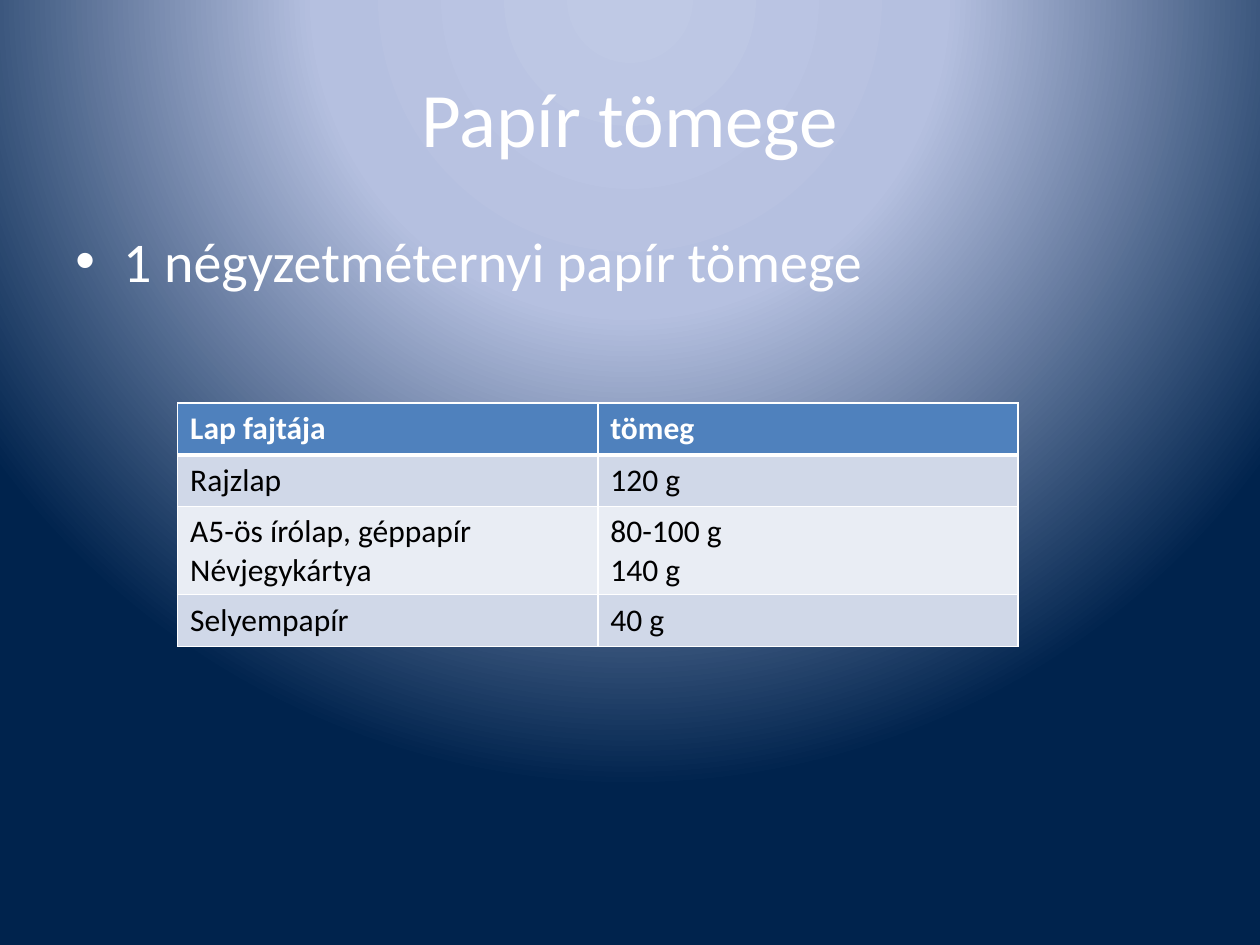
from lxml import etree
from pptx import Presentation
from pptx.dml.color import RGBColor
from pptx.enum.text import MSO_ANCHOR, PP_ALIGN
from pptx.oxml import parse_xml
from pptx.oxml.ns import nsdecls, qn
from pptx.util import Inches, Pt

CENTER = PP_ALIGN.CENTER
MIDDLE = MSO_ANCHOR.MIDDLE

WHITE = RGBColor(0xFF, 0xFF, 0xFF)
BLACK = RGBColor(0x00, 0x00, 0x00)
HEADER_BLUE = RGBColor(0x4F, 0x81, 0xBD)
BAND_DARK = RGBColor(0xD0, 0xD8, 0xE8)
BAND_LIGHT = RGBColor(0xE9, 0xED, 0xF4)
GLOW_CENTER = RGBColor(0xBF, 0xC9, 0xE5)
GLOW_EDGE = RGBColor(0xB5, 0xC0, 0xE0)
NIGHT_BLUE = RGBColor(0x00, 0x23, 0x4D)

PAPER_WEIGHTS = [
    (["Lap fajtája"], ["tömeg"]),
    (["Rajzlap"], ["120 g"]),
    (["A5-ös írólap, géppapír", "Névjegykártya"], ["80-100 g", "140 g"]),
    (["Selyempapír"], ["40 g"]),
]


class PaperSlide:
    font = "Calibri"

    def __init__(self, presentation):
        self.slide = presentation.slides.add_slide(presentation.slide_layouts[5])

    def background(self, stops):
        self.slide.background.fill.gradient()
        gradient = self.slide.element.find(".//" + qn("a:gradFill"))
        stop_xml = "".join(
            f'<a:gs pos="{position * 1000}"><a:srgbClr val="{color}"/></a:gs>'
            for position, color in stops
        )
        glow = parse_xml(
            f'<a:gradFill {nsdecls("a")} rotWithShape="1"><a:gsLst>{stop_xml}</a:gsLst>'
            '<a:path path="circle"><a:fillToRect l="50000" t="-80000" r="50000" b="180000"/>'
            "</a:path></a:gradFill>"
        )
        gradient.getparent().replace(gradient, glow)

    def add_text(self, paragraph, text, size, color, bold=False):
        run = paragraph.add_run()
        run.text = text
        run.font.name = self.font
        run.font.size = Pt(size)
        run.font.bold = bold
        run.font.color.rgb = color

    def title(self, text, left, top, width, height):
        heading = self.slide.shapes.title
        heading.left, heading.top = Inches(left), Inches(top)
        heading.width, heading.height = Inches(width), Inches(height)
        heading.text_frame.vertical_anchor = MIDDLE
        paragraph = heading.text_frame.paragraphs[0]
        paragraph.alignment = CENTER
        self.add_text(paragraph, text, 44, WHITE)

    def bullet(self, text, left, top, width, height):
        body = self.slide.shapes.add_textbox(
            Inches(left), Inches(top), Inches(width), Inches(height)
        )
        body.text_frame.word_wrap = True
        paragraph = body.text_frame.paragraphs[0]
        paragraph.space_before = Pt(6.4)
        self.add_text(paragraph, text, 32, WHITE)
        properties = paragraph._p.get_or_add_pPr()
        properties.set("marL", str(Inches(0.38)))
        properties.set("indent", str(Inches(-0.38)))
        etree.SubElement(properties, qn("a:buFont"), typeface="Arial")
        etree.SubElement(properties, qn("a:buChar"), char="•")

    def borders(self, cell, top, bottom):
        properties = cell._tc.get_or_add_tcPr()
        for side, weight in (("L", 1), ("R", 1), ("T", top), ("B", bottom)):
            line = etree.SubElement(properties, qn(f"a:ln{side}"), w=str(Pt(weight)))
            fill = etree.SubElement(line, qn("a:solidFill"))
            etree.SubElement(fill, qn("a:srgbClr"), val=str(WHITE))

    def table(self, rows, left, top, width, row_height):
        grid = self.slide.shapes.add_table(
            len(rows), len(rows[0]), Inches(left), Inches(top),
            Inches(width), Inches(row_height * len(rows)),
        ).table
        for row_index, row in enumerate(rows):
            header = row_index == 0
            band = BAND_DARK if row_index % 2 else BAND_LIGHT
            for column_index, lines in enumerate(row):
                cell = grid.cell(row_index, column_index)
                self.borders(cell, 3 if row_index == 1 else 1, 3 if header else 1)
                cell.fill.solid()
                cell.fill.fore_color.rgb = HEADER_BLUE if header else band
                frame = cell.text_frame
                for line_index, text in enumerate(lines):
                    paragraph = frame.add_paragraph() if line_index else frame.paragraphs[0]
                    self.add_text(paragraph, text, 18, WHITE if header else BLACK, header)


def main():
    presentation = Presentation()
    presentation.slide_width = Inches(10)
    presentation.slide_height = Inches(7.5)
    page = PaperSlide(presentation)
    page.background([(0, GLOW_CENTER), (40, GLOW_EDGE), (100, NIGHT_BLUE)])
    page.title("Papír tömege", 0.5, 0.3, 9, 1.25)
    page.bullet("1 négyzetméternyi papír tömege", 0.5, 1.75, 9, 4.95)
    page.table(PAPER_WEIGHTS, 1.41, 3.2, 6.67, 0.41)
    presentation.save("out.pptx")


if __name__ == "__main__":
    main()
